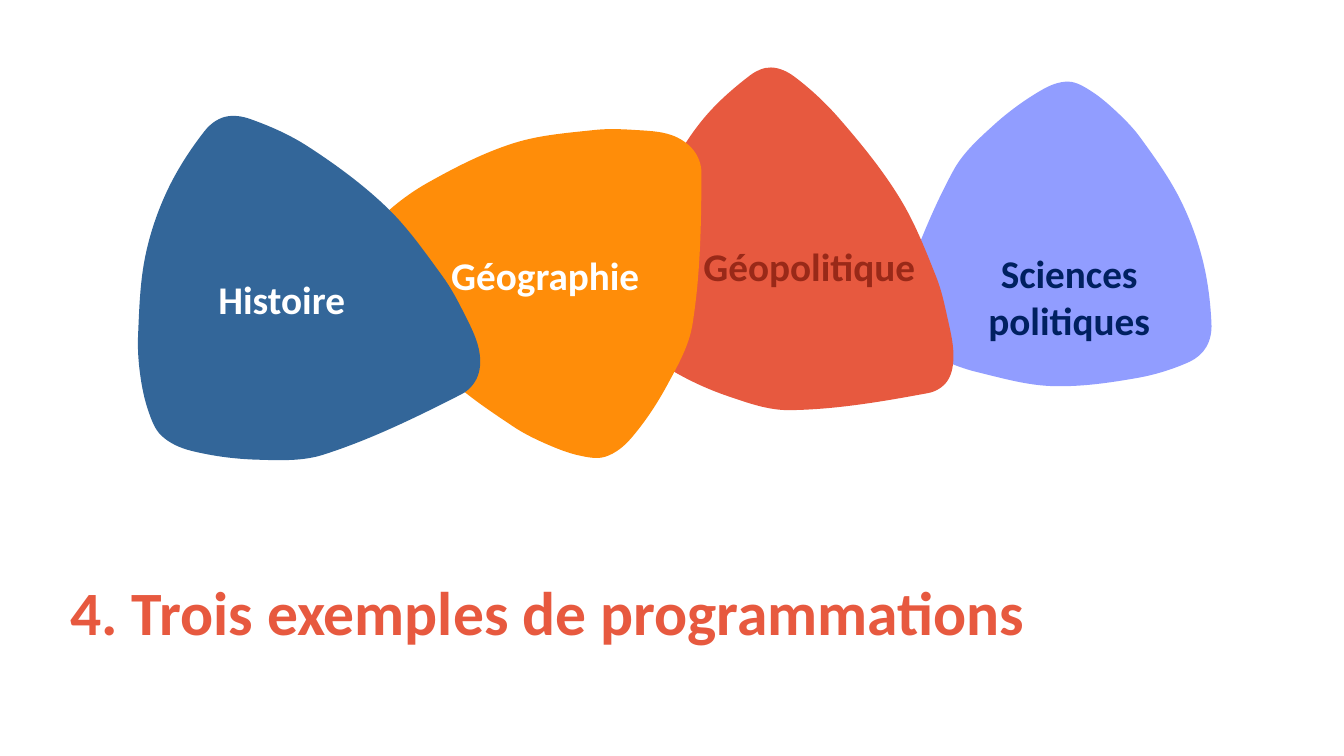
import math
from dataclasses import dataclass

import pptx
import pptx.dml.color
import pptx.enum.text
import pptx.oxml
import pptx.oxml.ns
import pptx.util

Cm = pptx.util.Cm
ALIGN = pptx.enum.text.PP_ALIGN
ANCHOR = pptx.enum.text.MSO_ANCHOR
OUTLINE_UNIT = Cm(0.0254)

Point = tuple[float, float]


@dataclass(frozen=True)
class Subject:
    name: str
    fill: str
    ink: str
    label_box: tuple[float, float, float, float]
    outline: list[Point]


SUBJECTS = [
    Subject("Sciences politiques", "919DFF", "002060", (23.16, 6.2, 7.57, 0.81), [
        (1202, 321), (1197, 344), (1180, 359), (1128, 375), (1043, 383), (969, 369),
        (935, 357), (906, 341), (891, 321), (891, 298), (946, 169), (986, 124),
        (1034, 89), (1060, 81), (1082, 90), (1108, 111), (1131, 136), (1170, 196),
        (1193, 257)]),
    Subject("Géopolitique", "E7593F", "992918", (17.07, 6.02, 6.65, 1.37), [
        (744, 75), (765, 67), (788, 76), (833, 118), (893, 197), (929, 275),
        (940, 315), (946, 353), (940, 378), (921, 390), (784, 407), (722, 393),
        (664, 366), (641, 344), (634, 318), (634, 281), (640, 245), (663, 174),
        (697, 119)]),
    Subject("Géographie", "FF8D09", "FFFFFF", (10.44, 6.25, 6.6, 1.32), [
        (369, 262), (366, 238), (378, 216), (425, 181), (510, 142), (590, 129),
        (630, 129), (666, 134), (688, 149), (696, 172), (687, 322), (662, 382),
        (626, 435), (601, 453), (575, 452), (541, 440), (509, 423), (447, 377),
        (401, 324)]),
    Subject("Histoire", "336699", "FFFFFF", (3.1, 6.86, 8.0, 1.52), [
        (203, 130), (223, 116), (248, 118), (305, 145), (384, 206), (439, 274),
        (460, 310), (475, 346), (474, 373), (458, 391), (321, 451), (255, 456),
        (189, 447), (160, 432), (147, 407), (139, 371), (137, 333), (144, 255),
        (166, 189)]),
]


def color(hex_code: str) -> pptx.dml.color.RGBColor:
    return pptx.dml.color.RGBColor.from_string(hex_code)


def curve_points(anchors: list[Point]) -> list[Point]:
    count = len(anchors)

    def handle(index: int, reach: float) -> Point:
        (x0, y0), (x1, y1) = anchors[index - 1], anchors[(index + 1) % count]
        x, y = anchors[index]
        chord = math.dist((x0, y0), (x1, y1))
        return x + reach * (x1 - x0) / chord, y + reach * (y1 - y0) / chord

    points = []
    for index, start in enumerate(anchors):
        following = (index + 1) % count
        reach = math.dist(start, anchors[following]) / 3
        points += [handle(index, reach), handle(following, -reach), anchors[following]]
    return [(x * OUTLINE_UNIT, y * OUTLINE_UNIT) for x, y in points]


def draw_petal(shapes, subject: Subject) -> None:
    points = curve_points(subject.outline)
    builder = shapes.build_freeform(*points[-1], scale=1.0)
    builder.add_line_segments(points, close=True)
    petal = builder.convert_to_shape()
    segments = list(petal._element.iter(pptx.oxml.ns.qn("a:lnTo")))
    for first in range(0, len(segments), 3):
        curve = pptx.oxml.parse_xml(
            f"<a:cubicBezTo {pptx.oxml.ns.nsdecls('a')}/>")
        segments[first].addprevious(curve)
        for segment in segments[first:first + 3]:
            curve.append(segment[0])
            segment.getparent().remove(segment)
    petal.shadow.inherit = False
    petal.fill.solid()
    petal.fill.fore_color.rgb = color(subject.fill)
    petal.line.fill.background()


def write(frame, text: str, size: int, ink: str, alignment) -> None:
    frame.word_wrap = True
    frame.text = text
    paragraph = frame.paragraphs[0]
    paragraph.alignment = alignment
    paragraph.font.name = "Calibri"
    paragraph.font.size = pptx.util.Pt(size)
    paragraph.font.bold = True
    paragraph.font.color.rgb = color(ink)


def draw_label(shapes, subject: Subject) -> None:
    frame = shapes.add_textbox(*map(Cm, subject.label_box)).text_frame
    frame.margin_left = frame.margin_right = Cm(0.08)
    frame.margin_top = frame.margin_bottom = Cm(0.08)
    frame.vertical_anchor = ANCHOR.TOP
    write(frame, subject.name, 28, subject.ink, ALIGN.CENTER)


def main() -> None:
    deck = pptx.Presentation()
    deck.slide_width, deck.slide_height = Cm(33.87), Cm(19.05)
    slide = deck.slides.add_slide(deck.slide_layouts[5])

    heading = slide.shapes.title
    heading.left, heading.top = Cm(1.52), Cm(13.16)
    heading.width, heading.height = Cm(29.21), Cm(4.7)
    heading.text_frame.vertical_anchor = ANCHOR.MIDDLE
    heading.text_frame.auto_size = pptx.enum.text.MSO_AUTO_SIZE.NONE
    write(heading.text_frame, "4. Trois exemples de programmations", 44, "E7593F",
          ALIGN.LEFT)
    heading.text_frame.paragraphs[0].line_spacing = 0.9

    petals = slide.shapes.add_group_shape().shapes
    for subject in SUBJECTS:
        draw_petal(petals, subject)
        draw_label(petals, subject)

    deck.save("out.pptx")


if __name__ == "__main__":
    main()
